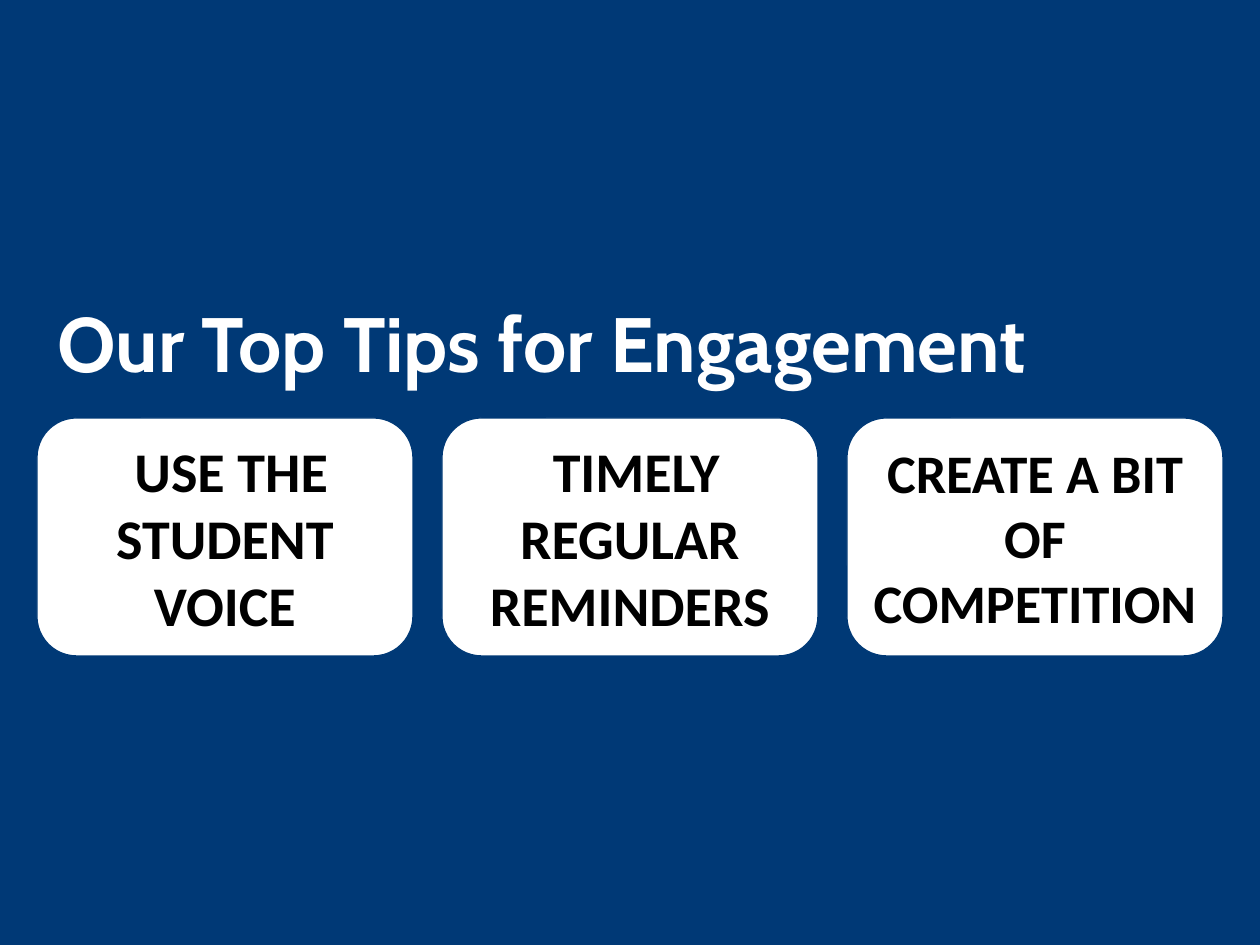
from dataclasses import dataclass

from pptx import Presentation
from pptx.dml.color import RGBColor as RGB
from pptx.enum.shapes import MSO_SHAPE as SHAPE
from pptx.enum.text import MSO_ANCHOR as ANCHOR, PP_ALIGN as ALIGN
from pptx.util import Emu, Pt

EMU_PER_PX = 914400 // 126


def px(n):
    return Emu(n * EMU_PER_PX)


@dataclass(frozen=True)
class Theme:
    navy: RGB = RGB(0x00, 0x39, 0x76)
    white: RGB = RGB(0xFF, 0xFF, 0xFF)
    black: RGB = RGB(0x00, 0x00, 0x00)
    title_font: str = "Cabin"
    tip_font: str = "Calibri"
    title_size: int = 44
    tip_size: int = 32
    long_tip_size: int = 31
    outline: float = 0.75


class Deck:
    def __init__(self, prs, theme):
        self.theme = theme
        self.s = prs.slides.add_slide(prs.slide_layouts[6])
        fill = self.s.background.fill
        fill.solid()
        fill.fore_color.rgb = theme.navy

    def set_text(self, sp, text, font, size, color, align):
        tf = sp.text_frame
        tf.word_wrap = True
        tf.vertical_anchor = ANCHOR.MIDDLE
        p = tf.paragraphs[0]
        p.text = text
        p.alignment = align
        p.font.name = font
        p.font.size = Pt(size)
        p.font.bold = True
        p.font.color.rgb = color

    def title(self, text, x, y, w, h):
        t = self.theme
        sp = self.s.shapes.add_textbox(px(x), px(y), px(w), px(h))
        self.set_text(sp, text, t.title_font, t.title_size, t.white, ALIGN.LEFT)

    def tip(self, text, size, x, y, w, h):
        t = self.theme
        sp = self.s.shapes.add_shape(SHAPE.ROUNDED_RECTANGLE, px(x), px(y), px(w), px(h))
        sp.shadow.inherit = False
        sp.fill.solid()
        sp.fill.fore_color.rgb = t.white
        sp.line.color.rgb = t.navy
        sp.line.width = Pt(t.outline)
        self.set_text(sp, text, t.tip_font, size, t.black, ALIGN.CENTER)


def main():
    prs = Presentation()
    prs.slide_width, prs.slide_height = px(1260), px(945)
    theme = Theme()
    deck = Deck(prs, theme)

    # Row of tips
    tips = [
        (" USE THE STUDENT VOICE", theme.tip_size),
        (" TIMELY REGULAR REMINDERS", theme.tip_size),
        ("CREATE A BIT OF COMPETITION", theme.long_tip_size),
    ]
    left, top, width, height, gap = 37, 418, 376, 238, 29
    for i, (text, size) in enumerate(tips):
        deck.tip(text, size, left + i * (width + gap), top, width, height)

    # Heading
    deck.title("Our Top Tips for Engagement", 45, 289, 1169, 106)

    prs.save("out.pptx")


if __name__ == "__main__":
    main()
